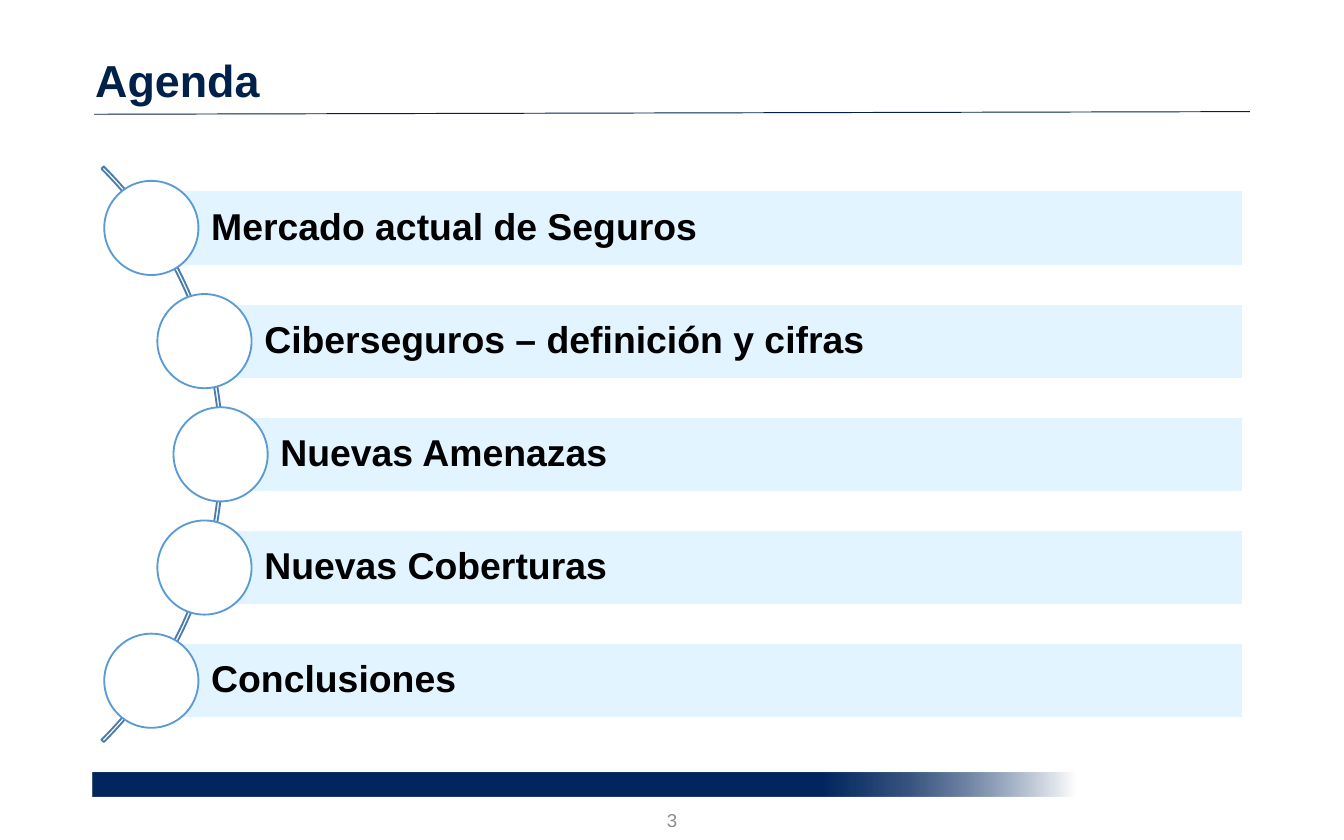
from math import sqrt

from lxml import etree
from pptx import Presentation
from pptx.dml.color import RGBColor
from pptx.enum.shapes import MSO_CONNECTOR as Connector, MSO_SHAPE as Shape
from pptx.enum.text import MSO_ANCHOR as Anchor, MSO_AUTO_SIZE as AutoSize, PP_ALIGN as Align
from pptx.oxml.ns import qn
from pptx.util import Cm, Pt

COLORS = {
    "navy": "00214A", "footer": "00265D", "bar": "E1F4FF", "ring": "5B9BD5",
    "arc": "497CAB", "white": "FFFFFF", "black": "000000", "gray": "8C8C8C",
}
TOPICS = [
    "Mercado actual de Seguros",
    "Ciberseguros – definición y cifras",
    "Nuevas Amenazas",
    "Nuevas Coberturas",
    "Conclusiones",
]

# Agenda geometry in centimetres: the circles sit along one arc
ARC_X, ARC_Y, ARC_SIZE = -3.48, 8.59, 15.39
TRACK_RADIUS, ROW_PITCH = 7.65, 2.14
BAR_RIGHT, BAR_HEIGHT, CIRCLE_SIZE = 23.5, 1.42, 1.78


def rgb(name):
    return RGBColor.from_string(COLORS[name])


def write_text(frame, text, size, color, bold=False, align=Align.LEFT,
               anchor=Anchor.MIDDLE, spacing=1.0, insets=(0.25, 0.13, 0.25, 0.13)):
    frame.word_wrap = True
    frame.auto_size = AutoSize.NONE
    frame.vertical_anchor = anchor
    (frame.margin_left, frame.margin_top,
     frame.margin_right, frame.margin_bottom) = map(Cm, insets)
    para = frame.paragraphs[0]
    para.alignment = align
    para.line_spacing = spacing
    span = para.add_run()
    span.text = text
    span.font.name = "Arial"
    span.font.size = Pt(size)
    span.font.bold = bold
    span.font.color.rgb = rgb(color)


class AgendaPage:
    def __init__(self, deck):
        self.page = deck.slides.add_slide(deck.slide_layouts[5])
        self.shapes = self.page.shapes

    def title(self, text, left, top, width, height):
        box = self.shapes.title
        box.left, box.top, box.width, box.height = map(Cm, (left, top, width, height))
        write_text(box.text_frame, text, 24, "navy", bold=True,
                   anchor=Anchor.BOTTOM, spacing=0.9)

    def label(self, text, left, top, width, height, **style):
        box = self.shapes.add_textbox(*map(Cm, (left, top, width, height)))
        write_text(box.text_frame, text, **style)

    def shape(self, kind, left, top, width, height, fill=None, line=None):
        item = self.shapes.add_shape(kind, *map(Cm, (left, top, width, height)))
        item.shadow.inherit = False
        if fill:
            item.fill.solid()
            item.fill.fore_color.rgb = rgb(fill)
        else:
            item.fill.background()
        if line:
            item.line.color.rgb = rgb(line)
            item.line.width = Pt(1)
        else:
            item.line.fill.background()
        return item

    def rule(self, x1, y1, x2, y2, color, width):
        line = self.shapes.add_connector(Connector.STRAIGHT, *map(Cm, (x1, y1, x2, y2)))
        line.line.color.rgb = rgb(color)
        line.line.width = Pt(width)
        etree.SubElement(line._element.spPr, qn("a:effectLst"))

    def gradient_band(self, left, top, width, height, stops):
        band = self.shape(Shape.RECTANGLE, left, top, width, height)
        band.fill.gradient()
        band.fill.gradient_angle = 0
        stop_list = band._element.spPr.find(qn("a:gradFill")).find(qn("a:gsLst"))
        for old_stop in list(stop_list):
            stop_list.remove(old_stop)
        for position, color, opacity in stops:
            stop = etree.SubElement(stop_list, qn("a:gs"), pos=str(position * 1000))
            tint = etree.SubElement(stop, qn("a:srgbClr"), val=COLORS[color])
            if opacity < 100:
                etree.SubElement(tint, qn("a:alpha"), val=str(opacity * 1000))

    def arc(self):
        half = ARC_SIZE / 2
        arc = self.shape(Shape.BLOCK_ARC, ARC_X - half, ARC_Y - half,
                         ARC_SIZE, ARC_SIZE, line="arc")
        for index, value in enumerate((189, 27, 0.004)):
            arc.adjustments[index] = value

    def topic(self, text, offset):
        x = ARC_X + sqrt(TRACK_RADIUS ** 2 - offset ** 2)
        y = ARC_Y + offset
        bar = self.shape(Shape.RECTANGLE, x, y - BAR_HEIGHT / 2,
                         BAR_RIGHT - x, BAR_HEIGHT, fill="bar", line="white")
        write_text(bar.text_frame, text, 20, "black", bold=True, spacing=0.9,
                   insets=(1.13, 0.15, 0.15, 0.15))
        half = CIRCLE_SIZE / 2
        self.shape(Shape.OVAL, x - half, y - half, CIRCLE_SIZE, CIRCLE_SIZE,
                   fill="white", line="ring")


def main():
    deck = Presentation()
    deck.slide_width, deck.slide_height = Cm(25.4), Cm(15.88)
    agenda = AgendaPage(deck)

    # Footer band and page number
    agenda.gradient_band(1.75, 14.61, 18.57, 0.44, [
        (0, "footer", 100), (74, "footer", 100), (83, "footer", 78), (100, "white", 100)])
    agenda.label("3", 10.87, 15.14, 3.66, 0.74, size=10, color="gray", align=Align.CENTER)

    # Title and its rule
    agenda.rule(1.78, 2.16, 23.62, 2.11, "navy", 0.5)
    agenda.title("Agenda", 1.55, 0.51, 21.82, 1.65)

    # Agenda topics along the arc
    agenda.arc()
    middle = (len(TOPICS) - 1) / 2
    for index, topic in enumerate(TOPICS):
        agenda.topic(topic, (index - middle) * ROW_PITCH)

    deck.save("out.pptx")


if __name__ == "__main__":
    main()
